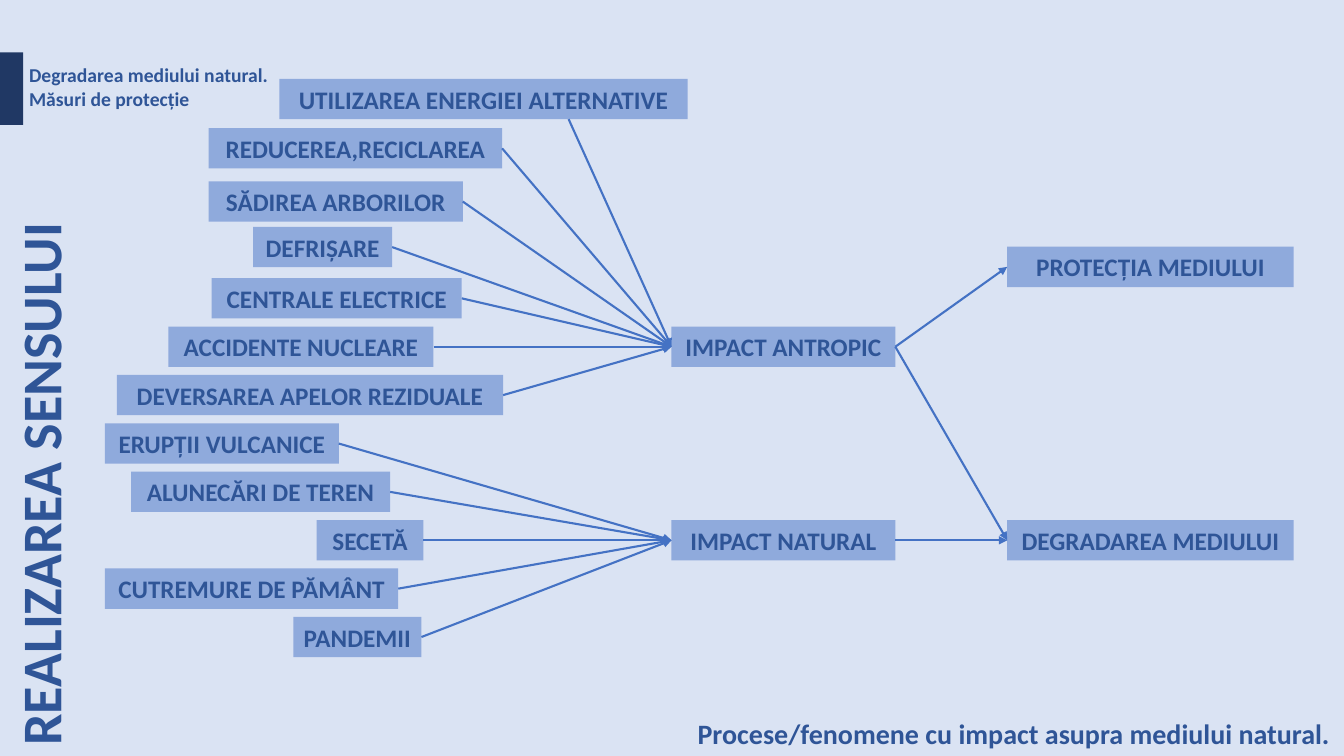
from dataclasses import dataclass

from lxml import etree
from pptx import Presentation, util as u
from pptx.dml.color import RGBColor
from pptx.enum import shapes, text
from pptx.oxml import ns

# Content: label, left edge, row, width
ANTHROPIC_CAUSES = [
    ("UTILIZAREA ENERGIEI ALTERNATIVE", 2.77, -0.12, 4.05),
    ("REDUCEREA,RECICLAREA", 2.07, 0.9, 2.91),
    ("SĂDIREA ARBORILOR", 2.07, 2, 2.52),
    ("DEFRIȘARE", 2.51, 2.94, 1.38),
    ("CENTRALE ELECTRICE", 2.1, 4, 2.48),
    ("ACCIDENTE NUCLEARE", 1.67, 5, 2.63),
    ("DEVERSAREA APELOR REZIDUALE", 1.16, 6, 3.83),
]
NATURAL_CAUSES = [
    ("ERUPȚII VULCANICE", 1.04, 7, 2.32),
    ("ALUNECĂRI DE TEREN", 1.3, 8, 2.57),
    ("SECETĂ", 3.14, 9, 1.06),
    ("CUTREMURE DE PĂMÂNT", 1.04, 10, 2.91),
    ("PANDEMII", 2.91, 11, 1.27),
]
IMPACT_LEFT, IMPACT_WIDTH = 6.66, 2.22
RESULT_LEFT, RESULT_WIDTH = 9.99, 2.84
IMPACTS = [
    ("IMPACT ANTROPIC", IMPACT_LEFT, 5, IMPACT_WIDTH),
    ("IMPACT NATURAL", IMPACT_LEFT, 9, IMPACT_WIDTH),
]
RESULTS = [
    ("PROTECȚIA MEDIULUI", RESULT_LEFT, 3.35, RESULT_WIDTH),
    ("DEGRADAREA MEDIULUI", RESULT_LEFT, 9, RESULT_WIDTH),
]
LINKS = [(0, 0), (0, 1), (1, 1)]  # impact, result
SECTION = "REALIZAREA SENSULUI"
TOPIC = "Degradarea mediului natural.\nMăsuri de protecție"
FOOTER = "Procese/fenomene cu impact asupra mediului natural."

# Grid
WIDTH, HEIGHT = 13.33, 7.5
ROW_TOP, ROW_PITCH, NODE_HEIGHT = 0.84, 0.48, 0.4
ENERGY_EXIT = 5.64  # where the arrow leaves the top box
TOP, LEFT, BOTTOM, RIGHT = 0, 1, 2, 3  # connection sites of a rectangle


@dataclass(frozen=True)
class Theme:
    font: str = "Calibri"
    ground: str = "DAE3F3"
    node: str = "8FAADC"
    ink: str = "2F5597"
    accent: str = "203864"
    arrow: str = "4472C4"
    section: int = 40
    footer: int = 20
    label: int = 18
    topic: int = 14
    line: float = 1.5


THEME = Theme()


def color(value):
    return RGBColor.from_string(value)


def write(shape, words, size, align=text.PP_ALIGN.LEFT, wrap=True):
    frame = shape.text_frame
    frame.text = words
    frame.word_wrap = wrap
    for para in frame.paragraphs:
        para.alignment = align
        for span in para.runs:
            span.font.name = THEME.font
            span.font.size = u.Pt(size)
            span.font.bold = True
            span.font.color.rgb = color(THEME.ink)


def add_text(page, words, size, left, top, width, height):
    box = page.shapes.add_textbox(*map(u.Inches, (left, top, width, height)))
    write(box, words, size)
    return box


def add_block(page, fill, left, top, width, height):
    block = page.shapes.add_shape(
        shapes.MSO_SHAPE.RECTANGLE, *map(u.Inches, (left, top, width, height)))
    block.shadow.inherit = False
    block.fill.solid()
    block.fill.fore_color.rgb = color(fill)
    block.line.fill.background()
    return block


def add_node(page, label, left, row, width):
    top = ROW_TOP + row * ROW_PITCH
    node = add_block(page, THEME.node, left, top, width, NODE_HEIGHT)
    write(node, label, THEME.label, text.PP_ALIGN.CENTER, wrap=False)
    node.text_frame.vertical_anchor = text.MSO_ANCHOR.MIDDLE
    return node


def add_arrow(page, source, target, exit_x=None):
    arrow = page.shapes.add_connector(shapes.MSO_CONNECTOR.STRAIGHT, 0, 0, 0, 0)
    if exit_x is None:
        arrow.begin_connect(source, RIGHT)
    else:
        arrow.begin_x = u.Inches(exit_x)
        arrow.begin_y = source.top + source.height
    arrow.end_connect(target, LEFT)
    arrow.line.color.rgb = color(THEME.arrow)
    arrow.line.width = u.Pt(THEME.line)
    outline = arrow.line._get_or_add_ln()
    etree.SubElement(outline, ns.qn("a:tailEnd"), type="triangle")
    etree.SubElement(arrow._element.spPr, ns.qn("a:effectLst"))


def main():
    deck = Presentation()
    deck.slide_width, deck.slide_height = u.Inches(WIDTH), u.Inches(HEIGHT)
    page = deck.slides.add_slide(deck.slide_layouts[6])
    page.background.fill.solid()
    page.background.fill.fore_color.rgb = color(THEME.ground)

    # Titles
    section = add_text(page, SECTION, THEME.section, -2.46, 4.26, 5.7, 0.77)
    section.rotation = 270
    add_block(page, THEME.accent, 0, 0.52, 0.23, 0.72)
    add_text(page, TOPIC, THEME.topic, 0.19, 0.58, 2.72, 0.57)
    add_text(page, FOOTER, THEME.footer, 6.82, 7.06, 6.51, 0.44)

    # Boxes
    causes = [[add_node(page, *cause) for cause in group]
              for group in (ANTHROPIC_CAUSES, NATURAL_CAUSES)]
    impacts = [add_node(page, *impact) for impact in IMPACTS]
    results = [add_node(page, *result) for result in RESULTS]

    # Arrows
    energy = causes[0][0]
    for group, impact in zip(causes, impacts):
        for cause in group:
            add_arrow(page, cause, impact, ENERGY_EXIT if cause is energy else None)
    for impact, result in LINKS:
        add_arrow(page, impacts[impact], results[result])

    deck.save("out.pptx")


if __name__ == "__main__":
    main()
